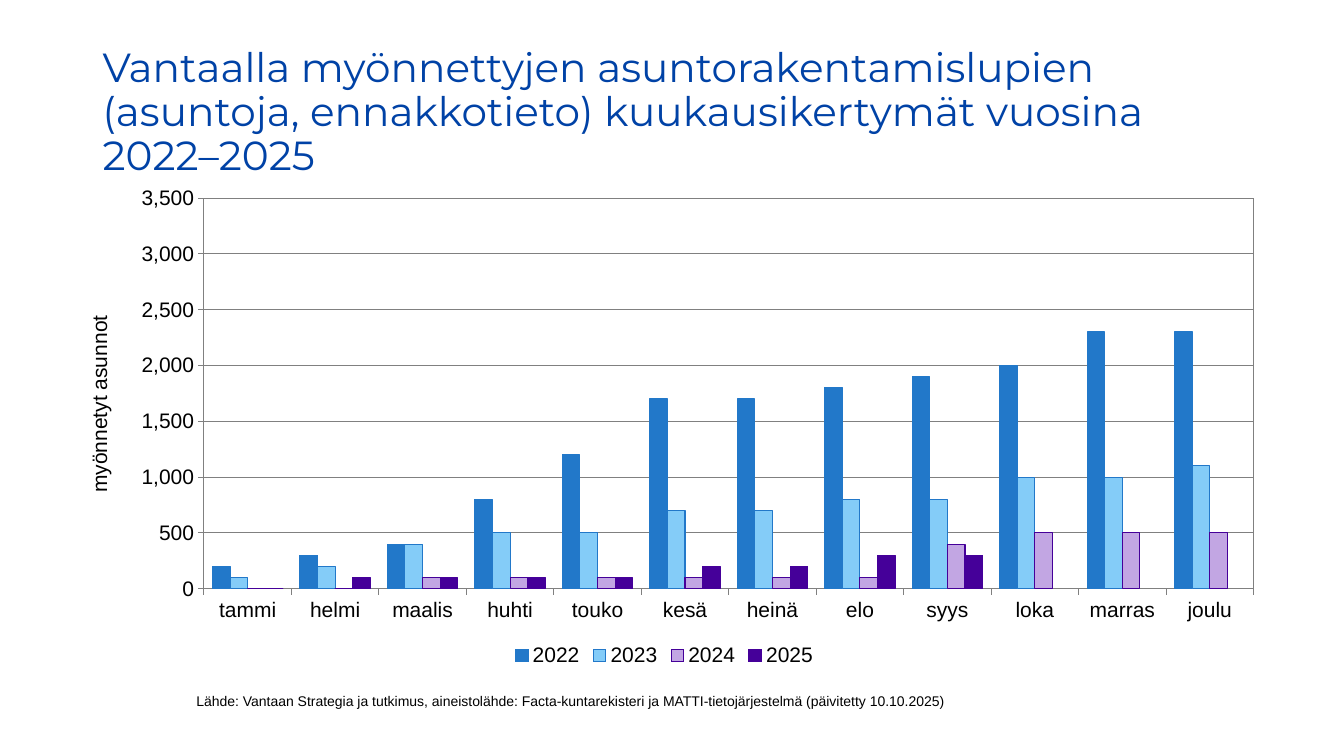
"""Builds a slide with a monthly column chart of housing permits in Vantaa."""
import pptx
import pptx.chart.data
import pptx.dml.color
import pptx.enum.chart
import pptx.enum.text
import pptx.oxml
import pptx.util

Pt = pptx.util.Pt
COLORS = {"title": "0042A6", "text": "000000", "grid": "808080", "blue": "2278C9",
          "sky": "84CCF8", "lilac": "C2A6E3", "violet": "450099"}
MONTHS = ["tammi", "helmi", "maalis", "huhti", "touko", "kesä",
          "heinä", "elo", "syys", "loka", "marras", "joulu"]
YEARS = [
    ("2022", "blue", "blue", [200, 300, 400, 800, 1200, 1700, 1700, 1800, 1900, 2000, 2300, 2300]),
    ("2023", "sky", "blue", [100, 200, 400, 500, 500, 700, 700, 800, 800, 1000, 1000, 1100]),
    ("2024", "lilac", "violet", [0, 0, 100, 100, 100, 100, 100, 100, 400, 500, 500, 500]),
    ("2025", "violet", "violet", [0, 100, 100, 100, 100, 200, 200, 300, 300, None, None, None]),
]
TEXTS = [
    ("Vantaalla myönnettyjen asuntorakentamislupien (asuntoja, ennakkotieto) "
     "kuukausikertymät vuosina 2022–2025",
     (66.24, 28.8, 828, 104.4), "Montserrat", 29, "title", 0.9, pptx.enum.text.MSO_ANCHOR.MIDDLE),
    ("Lähde: Vantaan Strategia ja tutkimus, aineistolähde: Facta-kuntarekisteri ja "
     "MATTI-tietojärjestelmä (päivitetty 10.10.2025)",
     (133.2, 491.04, 659.52, 28.8), "Arial", 10, "text", 1.0, pptx.enum.text.MSO_ANCHOR.TOP),
]


def style_font(font, name, size, color):
    font.name, font.size, font.bold = name, Pt(size), False
    font.color.rgb = pptx.dml.color.RGBColor.from_string(COLORS[color])


def style_line(line, color):
    line.color.rgb = pptx.dml.color.RGBColor.from_string(COLORS[color])
    line.width = Pt(0.75)


prs = pptx.Presentation()
prs.slide_width, prs.slide_height = Pt(960), Pt(540)
s = prs.slides.add_slide(prs.slide_layouts[6])

for text, box, name, size, color, spacing, anchor in TEXTS:
    tf = s.shapes.add_textbox(*map(Pt, box)).text_frame
    tf.word_wrap = True
    tf.vertical_anchor = anchor
    p = tf.paragraphs[0]
    p.text = text
    p.line_spacing = spacing
    style_font(p.font, name, size, color)

data = pptx.chart.data.CategoryChartData(number_format="#,##0")
data.categories = MONTHS
for year, fill, outline, values in YEARS:
    data.add_series(year, values)
chart = s.shapes.add_chart(pptx.enum.chart.XL_CHART_TYPE.COLUMN_CLUSTERED,
                           Pt(47.52), Pt(133.2), Pt(853.92), Pt(346.32), data).chart
style_font(chart.font, "Arial", 15, "text")
chart.has_title = False
chart.has_legend = True
chart.legend.position = pptx.enum.chart.XL_LEGEND_POSITION.BOTTOM
chart.legend.include_in_layout = False

plot = chart.plots[0]
plot.gap_width, plot.overlap = 96, 0
plot.vary_by_categories = False
for series, (year, fill, outline, values) in zip(plot.series, YEARS):
    series.invert_if_negative = False
    series.format.fill.solid()
    series.format.fill.fore_color.rgb = pptx.dml.color.RGBColor.from_string(COLORS[fill])
    style_line(series.format.line, outline)

for axis in (chart.category_axis, chart.value_axis):
    axis.major_tick_mark = pptx.enum.chart.XL_TICK_MARK.OUTSIDE
    axis.minor_tick_mark = pptx.enum.chart.XL_TICK_MARK.NONE
    style_line(axis.format.line, "grid")
axis = chart.value_axis
axis.minimum_scale, axis.maximum_scale, axis.major_unit = 0, 3500, 500
axis.has_major_gridlines = True
style_line(axis.major_gridlines.format.line, "grid")
axis.tick_labels.number_format = "#,##0"
axis.tick_labels.number_format_is_linked = False
p = axis.axis_title.text_frame.paragraphs[0]
p.text = "myönnetyt asunnot"
style_font(p.font, "Arial", 15, "text")

NS = ('xmlns:c="http://schemas.openxmlformats.org/drawingml/2006/chart" '
      'xmlns:a="http://schemas.openxmlformats.org/drawingml/2006/main"')
area = chart.element.chart.plotArea
for old in area.xpath("c:layout"):
    area.remove(old)
area.insert(0, pptx.oxml.parse_xml(
    f'<c:layout {NS}><c:manualLayout><c:layoutTarget val="inner"/>'
    '<c:xMode val="edge"/><c:yMode val="edge"/><c:x val="0.115"/><c:y val="0.024"/>'
    '<c:w val="0.878"/><c:h val="0.806"/></c:manualLayout></c:layout>'))
area.append(pptx.oxml.parse_xml(
    f'<c:spPr {NS}><a:noFill/><a:ln w="9525"><a:solidFill>'
    f'<a:srgbClr val="{COLORS["grid"]}"/></a:solidFill></a:ln></c:spPr>'))

prs.save("out.pptx")
